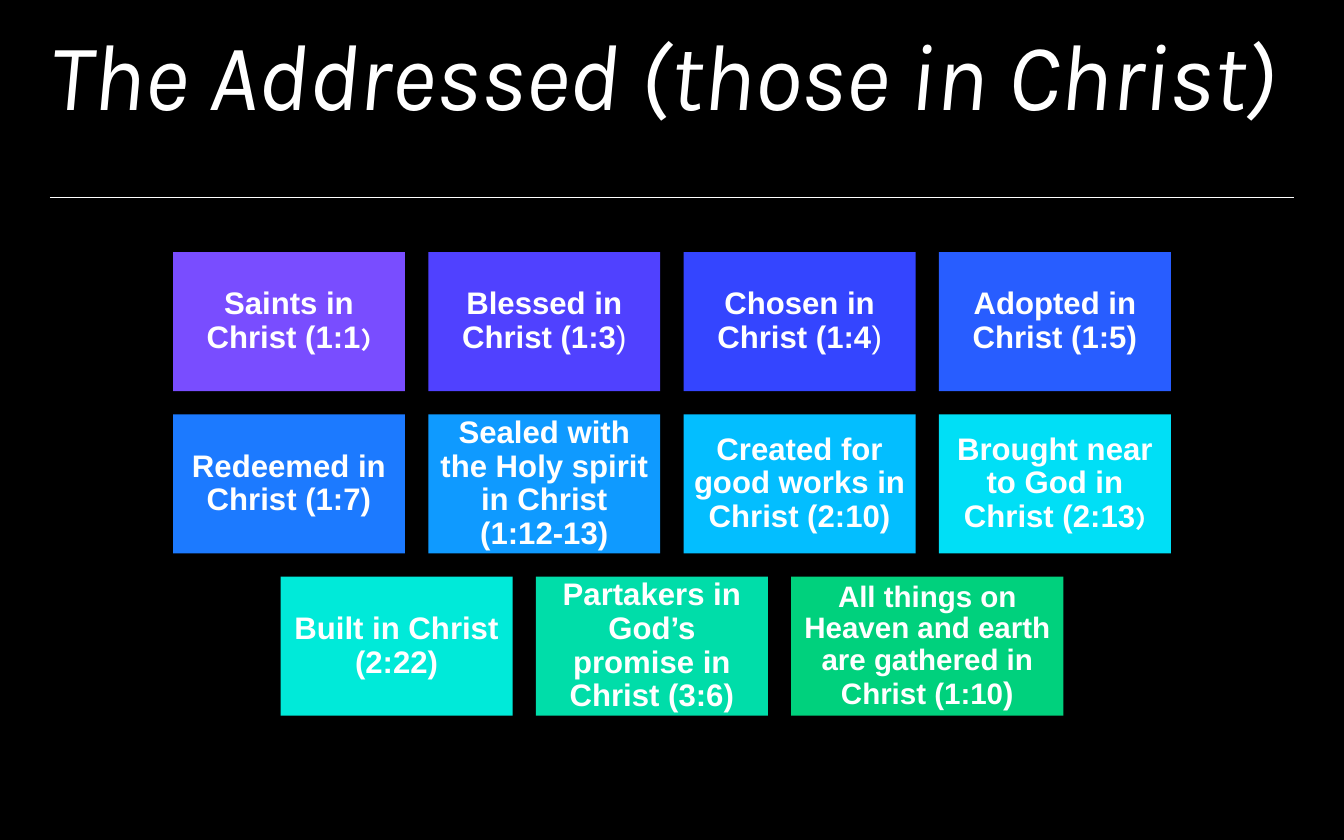
from pptx import Presentation
from pptx.dml.color import RGBColor
from pptx.enum.shapes import MSO_CONNECTOR, MSO_SHAPE
from pptx.enum.text import MSO_ANCHOR, MSO_AUTO_SIZE, PP_ALIGN
from pptx.oxml.ns import qn
from pptx.util import Cm, Pt
from lxml import etree

RECTANGLE = MSO_SHAPE.RECTANGLE
STRAIGHT = MSO_CONNECTOR.STRAIGHT
TOP, MIDDLE = MSO_ANCHOR.TOP, MSO_ANCHOR.MIDDLE
LEFT, CENTER = PP_ALIGN.LEFT, PP_ALIGN.CENTER
NO_AUTOFIT = MSO_AUTO_SIZE.NONE

COLORS = {
    "background": "000000", "text": "FFFFFF",
    "saints": "794DFF", "blessed": "5041FF", "chosen": "3445FF",
    "adopted": "285DFF", "redeemed": "1C7AFF", "sealed": "0F9AFF",
    "created": "03BEFF", "brought": "00DFF6", "built": "00EAD9",
    "partakers": "00DDA9", "gathered": "00D17D",
}
SLIDE_W, SLIDE_H = 30.48, 19.05
CARD_W, WIDE_CARD_W, CARD_H, GAP = 5.26, 6.17, 3.15, 0.53

# Runs are (text, size, bold, font)
BODY = (20, True, "Arial")
LIGHT = (20, False, "Arial")
SMALL = (17, True, "Karla")
COMPACT = (19, True, "Arial")

# Cards are (colour name, width, runs)
ROWS = [
    [("saints", CARD_W, [("Saints in Christ (1:1", *BODY), (")", *SMALL)]),
     ("blessed", CARD_W, [("Blessed in Christ (1:3", *BODY), (")", *LIGHT)]),
     ("chosen", CARD_W, [("Chosen in Christ (1:4", *BODY), (")", *LIGHT)]),
     ("adopted", CARD_W, [("Adopted in Christ (1:5)", *BODY)])],
    [("redeemed", CARD_W, [("Redeemed in Christ (1:7)", *BODY)]),
     ("sealed", CARD_W,
      [("Sealed with the Holy spirit in Christ (1:12-13)", *BODY)]),
     ("created", CARD_W,
      [("Created for good works in Christ (2:10)", *BODY)]),
     ("brought", CARD_W,
      [("Brought near to God in Christ (2:13", *BODY), (")", *SMALL)])],
    [("built", CARD_W, [("Built in Christ (2:22)", *BODY)]),
     ("partakers", CARD_W,
      [("Partakers in God’s promise in Christ (3:6)", *BODY)]),
     ("gathered", WIDE_CARD_W,
      [("All things on Heaven and earth are gathered in Christ (1:10",
        *COMPACT), (")", *BODY)])],
]


def color(name):
    return RGBColor.from_string(COLORS[name])


def set_frame(frame, inset, anchor, align):
    frame.word_wrap = True
    frame.auto_size = NO_AUTOFIT
    frame.vertical_anchor = anchor
    frame.margin_left = frame.margin_right = Cm(inset)
    frame.margin_top = frame.margin_bottom = Cm(inset)
    frame.paragraphs[0].alignment = align
    frame.paragraphs[0].line_spacing = 0.9


def set_font(run, size, bold, name):
    run.font.size, run.font.bold, run.font.name = Pt(size), bold, name
    run.font.color.rgb = color("text")


def add_heading(slide, left, top, width, height):
    """Title with a thin rule below it."""
    title = slide.shapes.title
    title.left, title.top = Cm(left), Cm(top)
    title.width, title.height = Cm(width), Cm(height)
    title.text_frame.text = "The Addressed (those in Christ)"
    set_frame(title.text_frame, 0, TOP, LEFT)
    heading = title.text_frame.paragraphs[0].runs[0]
    set_font(heading, 61, False, "Karla")
    heading.font.italic = True

    rule_y = Cm(top + height + 1.09)
    rule = slide.shapes.add_connector(
        STRAIGHT, Cm(left), rule_y, Cm(left + width), rule_y)
    rule.line.color.rgb = color("text")
    rule.line.width = Pt(0.5)
    etree.SubElement(rule._element.spPr, qn("a:effectLst"))


def add_card(slide, left, top, width, height, fill, runs):
    card = slide.shapes.add_shape(
        RECTANGLE, Cm(left), Cm(top), Cm(width), Cm(height))
    card.shadow.inherit = False
    card.fill.solid()
    card.fill.fore_color.rgb = color(fill)
    card.line.fill.background()
    set_frame(card.text_frame, 0.2, MIDDLE, CENTER)
    for text, *style in runs:
        run = card.text_frame.paragraphs[0].add_run()
        run.text = text
        set_font(run, *style)


def add_card_rows(slide, left, top, width):
    """Rows of cards, each row centred in the given width."""
    for index, row in enumerate(ROWS):
        row_width = sum(card[1] for card in row) + GAP * (len(row) - 1)
        x = left + (width - row_width) / 2
        y = top + index * (CARD_H + GAP)
        for fill, card_width, runs in row:
            add_card(slide, x, y, card_width, CARD_H, fill, runs)
            x += card_width + GAP


def main():
    deck = Presentation()
    deck.slide_width, deck.slide_height = Cm(SLIDE_W), Cm(SLIDE_H)
    slide = deck.slides.add_slide(deck.slide_layouts[5])
    slide.background.fill.solid()
    slide.background.fill.fore_color.rgb = color("background")
    add_heading(slide, 1.13, 0.64, 28.22, 2.74)
    add_card_rows(slide, 0, 5.72, SLIDE_W)
    deck.save("out.pptx")


if __name__ == "__main__":
    main()
